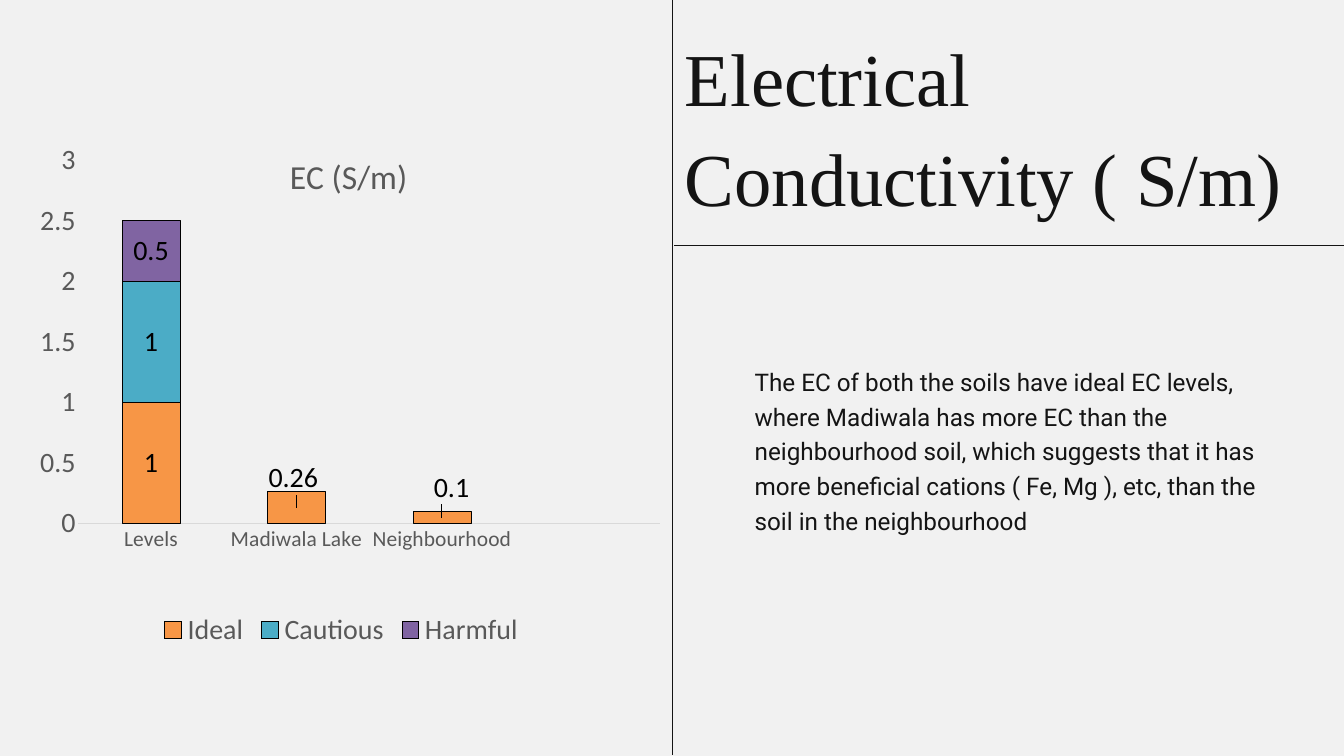
"""Build the electrical conductivity slide with a stacked column chart."""
from lxml.etree import SubElement
from pptx import Presentation
from pptx.chart.data import CategoryChartData
from pptx.dml.color import RGBColor
from pptx.enum.chart import XL_CHART_TYPE as ChartType, XL_LABEL_POSITION as LabelPos
from pptx.enum.chart import XL_LEGEND_POSITION as LegendPos, XL_TICK_MARK as TickMark
from pptx.enum.shapes import MSO_CONNECTOR as Connector
from pptx.enum.text import MSO_ANCHOR as Anchor, MSO_AUTO_SIZE as AutoSize, PP_ALIGN as Align
from pptx.oxml import parse_xml
from pptx.oxml.ns import nsdecls, qn
from pptx.util import Inches, Pt

PAPER = RGBColor(0xF1, 0xF1, 0xF1)
INK = RGBColor(0x14, 0x14, 0x14)
BLACK = RGBColor(0, 0, 0)
GREY = RGBColor(0x59, 0x59, 0x59)
PALE = RGBColor(0xD9, 0xD9, 0xD9)
ORANGE = RGBColor(0xF7, 0x96, 0x46)
TEAL = RGBColor(0x4B, 0xAC, 0xC6)
PURPLE = RGBColor(0x80, 0x64, 0xA2)


def style(font, name, size, color):
    font.name, font.size, font.bold = name, Pt(size), False
    font.color.rgb = color


def manual_layout(**settings):
    items = "".join(f'<c:{tag} val="{value}"/>' for tag, value in settings.items())
    return parse_xml(
        f'<c:layout {nsdecls("c")}><c:manualLayout>{items}</c:manualLayout></c:layout>')


deck = Presentation()
deck.slide_width, deck.slide_height = Inches(20), Inches(11.25)
slide = deck.slides.add_slide(deck.slide_layouts[1])
slide.background.fill.solid()
slide.background.fill.fore_color.rgb = PAPER

for x1, y1, x2, y2 in [(10.01, 0, 10.01, 11.24), (10.03, 3.65, 20, 3.65)]:
    divider = slide.shapes.add_connector(
        Connector.STRAIGHT, Inches(x1), Inches(y1), Inches(x2), Inches(y2))
    divider.line.color.rgb = INK
    divider.line.width = Pt(1.5)
    SubElement(divider._element.spPr, qn("a:effectLst"))

heading = slide.shapes.title
heading.text_frame.text = "Electrical\nConductivity ( S/m)"
finding = slide.placeholders[1]
finding.text_frame.text = (
    "The EC of both the soils have ideal EC levels, where Madiwala has more EC than the "
    "neighbourhood soil, which suggests that it has more beneficial cations ( Fe, Mg ), etc, "
    "than the soil in the neighbourhood")

for holder, box, font_name, size, leading in [
    (heading, (10.19, 0.3, 9.7, 3.03), "Times New Roman", 80, 108),
    (finding, (11.23, 5.38, 7.55, 2.55), "Roboto", 26, 37.2),
]:
    holder.left, holder.top, holder.width, holder.height = map(Inches, box)
    frame = holder.text_frame
    frame.margin_left = frame.margin_right = frame.margin_top = frame.margin_bottom = 0
    frame.word_wrap, frame.auto_size = True, AutoSize.NONE
    frame.vertical_anchor = Anchor.TOP
    for paragraph in frame.paragraphs:
        properties = paragraph._p.get_or_add_pPr()
        properties.set("marL", "0")
        properties.set("indent", "0")
        SubElement(properties, qn("a:buNone"))
        paragraph.alignment = Align.LEFT
        paragraph.line_spacing = Pt(leading)
        paragraph.space_before = Pt(0)
        for run in paragraph.runs:
            style(run.font, font_name, size, INK)

levels = CategoryChartData()
levels.categories = ["Levels", "Madiwala Lake", "Neighbourhood", ""]
levels.add_series("Ideal", [1, 0.26, 0.1, None])
levels.add_series("Cautious", [1, None, None, None])
levels.add_series("Harmful", [0.5, None, None, None])
chart = slide.shapes.add_chart(
    ChartType.COLUMN_STACKED, Inches(0.33), Inches(1.79), Inches(9.5), Inches(7.92), levels).chart
style(chart.font, "Calibri", 30, BLACK)

chart.has_title = True
chart.chart_title.text_frame.text = "EC (S/m)"
style(chart.chart_title.text_frame.paragraphs[0].runs[0].font, "Calibri", 36, GREY)
chart.chart_title.include_in_layout = True
title_xml = chart.chart_title._element
for old in title_xml.findall(qn("c:layout")):
    title_xml.remove(old)
title_xml.find(qn("c:tx")).addnext(manual_layout(xMode="edge", yMode="edge", x=0.41, y=0.05))

plot_area = chart._chartSpace.chart.plotArea
for old in plot_area.findall(qn("c:layout")):
    plot_area.remove(old)
plot_area.insert(0, manual_layout(
    layoutTarget="inner", xMode="edge", yMode="edge", x=0.088, y=0.075, w=0.912, h=0.682))

chart.has_legend = True
chart.legend.position = LegendPos.BOTTOM
chart.legend.include_in_layout = False
style(chart.legend.font, "Calibri", 30, GREY)

for axis, size in [(chart.category_axis, 23), (chart.value_axis, 30)]:
    style(axis.tick_labels.font, "Calibri", size, GREY)
    axis.major_tick_mark = axis.minor_tick_mark = TickMark.NONE
    axis.has_major_gridlines = False
chart.category_axis.format.line.color.rgb = PALE
chart.category_axis.format.line.width = Pt(0.75)
chart.value_axis.format.line.fill.background()
chart.value_axis.minimum_scale, chart.value_axis.maximum_scale = 0, 3
chart.value_axis.major_unit = 0.5

columns = chart.plots[0]
columns.gap_width, columns.overlap = 150, 100
columns.vary_by_categories = False
for series, color in zip(columns.series, [ORANGE, TEAL, PURPLE]):
    series.format.fill.solid()
    series.format.fill.fore_color.rgb = color
    series.format.line.color.rgb = BLACK
    series.format.line.width = Pt(0.75)
    series.data_labels.show_value = True
    series.data_labels.position = LabelPos.CENTER
    style(series.data_labels.font, "Calibri", 30, BLACK)

ideal = columns.series[0]
for index, shift in [(1, -0.005), (2, 0.015)]:
    label = ideal.points[index].data_label
    label.position = LabelPos.CENTER
    style(label.font, "Calibri", 30, BLACK)
    label_xml = ideal.data_labels._element.findall(qn("c:dLbl"))[index - 1]
    label_xml.find(qn("c:idx")).addnext(manual_layout(x=shift, y=-0.055))

deck.save("out.pptx")
